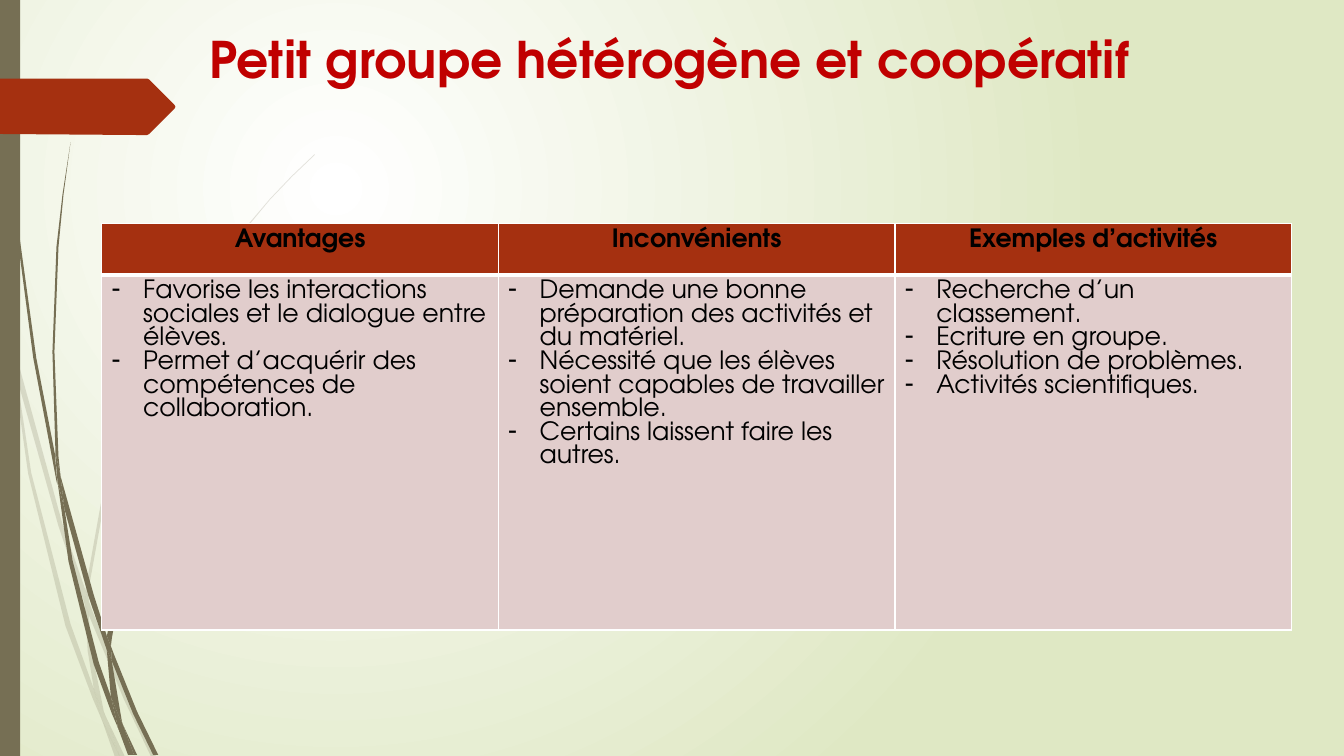
from dataclasses import dataclass
from typing import Optional

from lxml.etree import SubElement
from pptx import Presentation
from pptx.dml.color import RGBColor
from pptx.enum.shapes import MSO_SHAPE
from pptx.enum.text import MSO_ANCHOR, PP_ALIGN as Align
from pptx.oxml.ns import qn
from pptx.util import Inches, Pt

FONT = "TeX Gyre Adventor"
WHITE = RGBColor(0xFF, 0xFF, 0xFF)
BLACK = RGBColor(0x00, 0x00, 0x00)
PALE_GREEN = RGBColor(0xDF, 0xE8, 0xC4)
OLIVE = RGBColor(0x76, 0x6F, 0x54)
RUST = RGBColor(0xA5, 0x30, 0x10)
RED = RGBColor(0xC0, 0x00, 0x00)
PINK = RGBColor(0xE1, 0xCD, 0xCC)

Points = list[tuple[float, float]]


@dataclass(frozen=True)
class Column:
    heading: str
    items: list[str]


@dataclass(frozen=True)
class Outline:
    points: Points
    color: RGBColor = OLIVE
    opacity: int = 100


COLUMNS = [
    Column("Avantages", [
        "Favorise les interactions sociales et le dialogue entre élèves.",
        "Permet d’acquérir des compétences de collaboration.",
    ]),
    Column("Inconvénients", [
        "Demande une bonne préparation des activités et du matériel.",
        "Nécessité que les élèves soient capables de travailler ensemble.",
        "Certains laissent faire les autres.",
    ]),
    Column("Exemples d’activités", [
        "Recherche d’un classement.",
        "Ecriture en groupe.",
        "Résolution de problèmes.",
        "Activités scientifiques.",
    ]),
]

PALE_BLADES: list[Points] = [
    [(0.11, 3.5), (0.09, 3.22), (0, 2.82), (0, 2.99), (0.1, 3.44)],
    [(0.58, 5.22), (0.84, 5.99), (0.85, 5.86), (0.62, 5.2), (0.14, 3.45), (0.17, 3.76)],
    [(0.92, 6.07), (0.88, 5.96), (0.88, 6.1), (1.23, 6.94), (1.5, 7.51), (1.55, 7.51),
     (1.27, 6.92)],
    [(1.19, 7.51), (1.24, 7.51), (1.05, 7.11)],
    [(0.93, 6.83), (0.7, 6.19), (0.31, 4.69), (0.17, 3.76), (0.11, 3.5), (0.28, 4.7),
     (0.65, 6.21), (0.92, 6.93), (1.01, 7.14), (0.99, 7.07)],
    [(0.84, 5.99), (0.87, 6.46), (0.93, 6.83), (0.96, 6.92), (1.05, 7.11), (1.03, 7.06),
     (0.91, 6.46), (0.88, 6.1), (0.88, 6.08)],
    [(0.88, 5.84), (1.1, 4.62), (1.6, 3.49), (2.29, 2.45), (2.68, 1.98), (2.9, 1.75),
     (3.12, 1.54), (3.12, 1.53), (2.89, 1.75), (2.68, 1.97), (2.28, 2.44), (1.58, 3.48),
     (1.07, 4.61), (0.85, 5.84), (0.85, 5.86), (0.88, 5.96)],
    [(1.01, 7.14), (1.14, 7.51), (1.19, 7.51)],
    [(0.88, 6.08), (0.88, 6.1), (0.88, 5.96), (0.85, 5.86), (0.84, 5.99)],
    [(0.96, 6.92), (0.93, 6.83), (0.99, 7.07), (1.01, 7.14), (1.19, 7.51), (1.05, 7.11)],
]

DARK_BLADES: list[Points] = [
    [(0.07, 1.1), (0.17, 2.33), (0.33, 3.55), (0.56, 4.77), (0.57, 4.81), (0.55, 4.57),
     (0.55, 4.53), (0.36, 3.55), (0.19, 2.32), (0.08, 1.09), (0.05, 0.48), (0.04, 0),
     (0.03, 0), (0.04, 0.48)],
    [(0.88, 5.92), (1.06, 6.45), (1.06, 6.33), (1.06, 6.31), (0.93, 5.9), (0.6, 4.72),
     (0.64, 5.05)],
    [(1.13, 6.49), (1.1, 6.41), (1.11, 6.56), (1.32, 7.08), (1.52, 7.49), (1.57, 7.49),
     (1.36, 7.06)],
    [(1.1, 6.91), (0.98, 6.57), (0.72, 5.56), (0.64, 5.05), (0.57, 4.77), (0.68, 5.57),
     (0.93, 6.59), (1.11, 7.08), (1.17, 7.22), (1.16, 7.17)],
    [(0.6, 4.72), (0.58, 4.53), (0.54, 3.49), (0.58, 2.45), (0.63, 1.93), (0.7, 1.41),
     (0.62, 1.93), (0.56, 2.45), (0.52, 3.49), (0.55, 4.49)],
    [(1.33, 7.49), (1.36, 7.49), (1.22, 7.19)],
    [(0.57, 4.77), (0.64, 5.05), (0.6, 4.72), (0.55, 4.49), (0.55, 4.53)],
    [(1.11, 6.33), (1.25, 5.52), (1.58, 4.76), (2.05, 4.06), (2.31, 3.74), (2.45, 3.59),
     (2.61, 3.44), (2.6, 3.44), (2.45, 3.58), (2.31, 3.73), (2.04, 4.05), (1.56, 4.74),
     (1.22, 5.51), (1.06, 6.31), (1.1, 6.41)],
    [(1.17, 7.22), (1.27, 7.49), (1.31, 7.49)],
    [(1.06, 6.45), (1.1, 6.91), (1.16, 7.06), (1.22, 7.19), (1.21, 7.16), (1.11, 6.56),
     (1.09, 6.51)],
    [(1.06, 6.45), (1.09, 6.51), (1.11, 6.56), (1.1, 6.41), (1.06, 6.31), (1.06, 6.33)],
    [(1.16, 7.06), (1.1, 6.91), (1.16, 7.17), (1.17, 7.22), (1.3, 7.49), (1.33, 7.49),
     (1.22, 7.19)],
]

RIBBON: Points = [(1.74, 1.06), (1.73, 1.08), (1.48, 1.33), (1.46, 1.34), (1.36, 1.34),
                  (0, 1.33), (0, 0.78), (1.46, 0.78), (1.48, 0.79), (1.73, 1.04)]


def paint_background(page) -> None:
    fill = page.background.fill
    fill.gradient()
    for stop, color in zip(fill.gradient_stops, (WHITE, PALE_GREEN)):
        stop.color.rgb = color
    gradient = next(page.element.iter(qn("a:gradFill")))
    gradient.remove(gradient.find(qn("a:lin")))
    radial = SubElement(gradient, qn("a:path"), path="circle")
    SubElement(radial, qn("a:fillToRect"), l="50000", t="50000", r="100000", b="100000")


def paint_shape(shape, color: RGBColor, opacity: int = 100) -> None:
    shape.shadow.inherit = False
    shape.line.fill.background()
    shape.fill.solid()
    shape.fill.fore_color.rgb = color
    if opacity < 100:
        tone = next(shape.element.spPr.iter(qn("a:srgbClr")))
        SubElement(tone, qn("a:alpha"), val=str(opacity * 1000))


def draw_outline(page, outline: Outline) -> None:
    start, *rest = [(Inches(x), Inches(y)) for x, y in outline.points]
    builder = page.shapes.build_freeform(*start)
    builder.add_line_segments(rest, close=True)
    paint_shape(builder.convert_to_shape(), outline.color, outline.opacity)


def write_text(frame, lines: list[str], *, size: float = 18, color: RGBColor = BLACK,
               bold: bool = False, align: Align = Align.LEFT, bullet: Optional[str] = None,
               spacing: Optional[float] = None) -> None:
    frame.word_wrap = True
    for index, line in enumerate(lines):
        para = frame.add_paragraph() if index else frame.paragraphs[0]
        para.alignment = align
        para.line_spacing = spacing
        if bullet:
            props = para._p.get_or_add_pPr()
            props.set("marL", str(Inches(0.31)))
            props.set("indent", str(-Inches(0.31)))
            SubElement(props, qn("a:buChar"), char=bullet)
        span = para.add_run()
        span.text = line
        span.font.name, span.font.size = FONT, Pt(size)
        span.font.bold, span.font.color.rgb = bold, color


def style_cell(cell, color: RGBColor, bottom: float) -> None:
    props = cell._tc.get_or_add_tcPr()
    for side, width in (("L", 1), ("R", 1), ("T", 1), ("B", bottom)):
        border = SubElement(props, qn(f"a:ln{side}"), w=str(Pt(width)))
        SubElement(SubElement(border, qn("a:solidFill")), qn("a:srgbClr"), val=str(WHITE))
    cell.fill.solid()
    cell.fill.fore_color.rgb = color


def draw_table(page, columns: list[Column]) -> None:
    table = page.shapes.add_table(2, len(columns), Inches(1.01), Inches(2.22),
                                  Inches(11.8), Inches(4.03)).table
    for row, height in zip(table.rows, (0.51, 3.52)):
        row.height = Inches(height)
    for index, column in enumerate(columns):
        head, body = table.cell(0, index), table.cell(1, index)
        style_cell(head, RUST, 3)
        style_cell(body, PINK, 1)
        write_text(head.text_frame, [column.heading], bold=True, align=Align.CENTER)
        write_text(body.text_frame, column.items, bullet="-")


def main() -> None:
    deck = Presentation()
    deck.slide_width, deck.slide_height = Inches(13.33), Inches(7.5)
    page = deck.slides.add_slide(deck.slide_layouts[6])
    paint_background(page)
    for blade in PALE_BLADES:
        draw_outline(page, Outline(blade, opacity=20))
    for blade in DARK_BLADES:
        draw_outline(page, Outline(blade))
    band = page.shapes.add_shape(MSO_SHAPE.RECTANGLE, 0, 0, Inches(0.2), Inches(7.5))
    paint_shape(band, OLIVE)
    draw_outline(page, Outline(RIBBON, RUST))
    title = page.shapes.add_textbox(Inches(1.98), Inches(0.23), Inches(9.75), Inches(0.81))
    title.text_frame.vertical_anchor = MSO_ANCHOR.TOP
    write_text(title.text_frame, ["Petit groupe hétérogène et coopératif"],
               size=36, color=RED, bold=True)
    draw_table(page, COLUMNS)
    deck.save("out.pptx")


if __name__ == "__main__":
    main()
